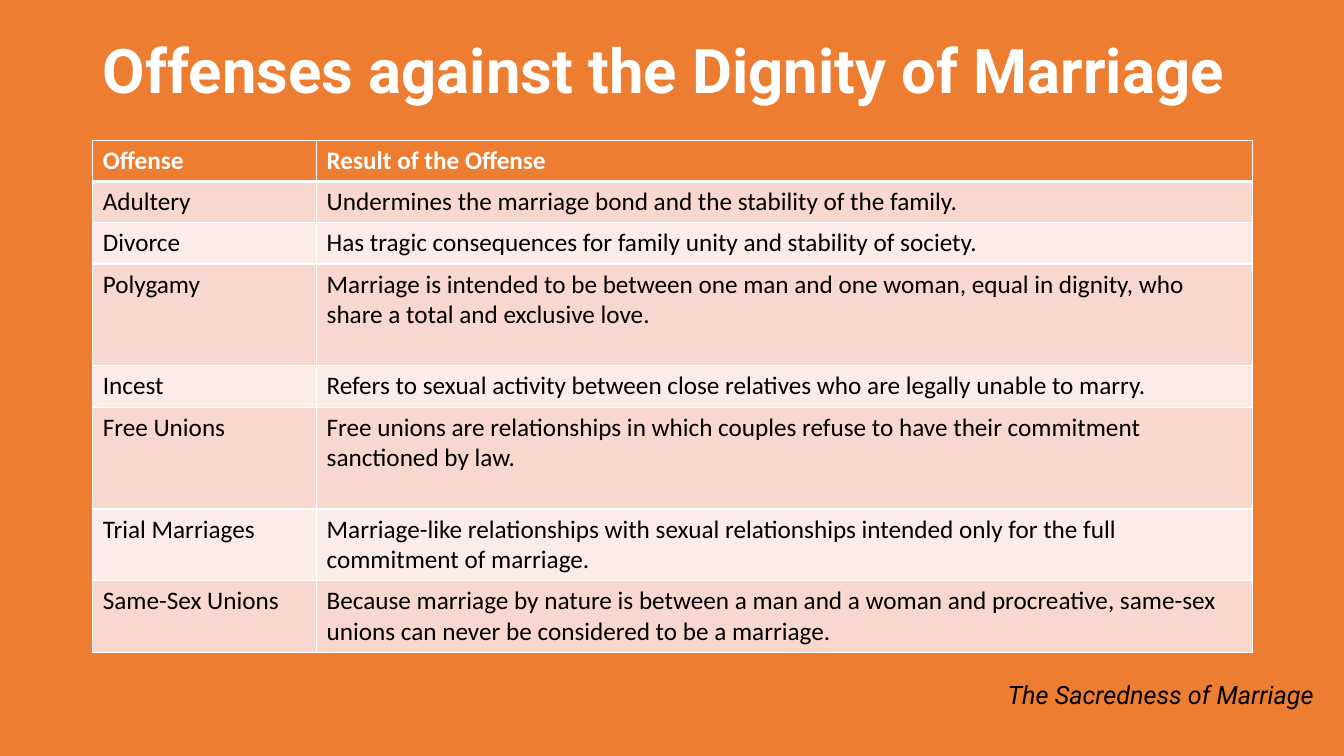
from dataclasses import dataclass

from lxml import etree
from pptx import Presentation
from pptx.dml.color import RGBColor
from pptx.enum import text
from pptx.oxml import ns
from pptx.util import Inches, Pt


@dataclass(frozen=True)
class Theme:
    orange: str = "ED7D31"
    white: str = "FFFFFF"
    black: str = "000000"
    bands: tuple = ("F8D7CE", "FCECE8")
    title_font: str = "Roboto"
    table_font: str = "Calibri"
    title_size: int = 44
    body_size: int = 18


theme = Theme()


def write(tf, words, font, size=theme.body_size, color=theme.black, bold=False,
          italic=False, align=text.PP_ALIGN.LEFT, spacing=1.0):
    tf.word_wrap = True
    p = tf.paragraphs[0]
    p.alignment = align
    p.line_spacing = spacing
    r = p.add_run()
    r.text = words
    r.font.name = font
    r.font.size = Pt(size)
    r.font.bold = bold
    r.font.italic = italic
    r.font.color.rgb = RGBColor.from_string(color)


def add_borders(cell, **widths):
    """Draw white cell borders; widths in points are keyed L, R, T and B."""
    tc_pr = cell._tc.get_or_add_tcPr()
    for i, (side, width) in enumerate(widths.items()):
        ln = etree.Element(ns.qn(f"a:ln{side}"), w=str(Pt(width)))
        fill = etree.SubElement(ln, ns.qn("a:solidFill"))
        etree.SubElement(fill, ns.qn("a:srgbClr"), val=theme.white)
        tc_pr.insert(i, ln)


prs = Presentation()
prs.slide_width = Inches(13.33)
prs.slide_height = Inches(7.5)
s = prs.slides.add_slide(prs.slide_layouts[5])
s.background.fill.solid()
s.background.fill.fore_color.rgb = RGBColor.from_string(theme.orange)

title = s.shapes.title
title.left, title.top = Inches(0.92), Inches(0)
title.width, title.height = Inches(12.42), Inches(1.45)
title.text_frame.vertical_anchor = text.MSO_ANCHOR.MIDDLE
write(title.text_frame, "Offenses against the Dignity of Marriage", theme.title_font,
      size=theme.title_size, color=theme.white, bold=True, spacing=0.9)

# Each row: height in inches, offense, result
offenses = [
    (0.41, "Offense", "Result of the Offense"),
    (0.41, "Adultery", "Undermines the marriage bond and the stability of the family."),
    (0.41, "Divorce", "Has tragic consequences for family unity and stability of society."),
    (1.01, "Polygamy", "Marriage is intended to be between one man and one woman, equal in "
     "dignity, who share a total and exclusive love."),
    (0.41, "Incest", "Refers to sexual activity between close relatives who are legally "
     "unable to marry."),
    (1.01, "Free Unions", "Free unions are relationships in which couples refuse to have "
     "their commitment sanctioned by law."),
    (0.71, "Trial Marriages", "Marriage-like relationships with sexual relationships "
     "intended only for the full commitment of marriage."),
    (0.71, "Same-Sex Unions", "Because marriage by nature is between a man and a woman and "
     "procreative, same-sex unions can never be considered to be a marriage."),
]
table_height = sum(height for height, *_ in offenses)
table = s.shapes.add_table(len(offenses), 2, Inches(0.92), Inches(1.39),
                           Inches(11.5), Inches(table_height)).table
table.columns[0].width = Inches(2.22)
table.columns[1].width = Inches(9.28)

for i, (height, *words) in enumerate(offenses):
    header = i == 0
    table.rows[i].height = Inches(height)
    for cell, content in zip(table.rows[i].cells, words):
        cell.fill.solid()
        cell.fill.fore_color.rgb = RGBColor.from_string(
            theme.orange if header else theme.bands[(i - 1) % 2])
        add_borders(cell, L=1, R=1, T=3 if i == 1 else 1, B=3 if header else 1)
        write(cell.text_frame, content, theme.table_font, bold=header,
              color=theme.white if header else theme.black)

footer = s.shapes.add_textbox(Inches(6.37), Inches(6.69), Inches(6.76), Inches(1.01))
write(footer.text_frame, "The Sacredness of Marriage", theme.title_font,
      italic=True, align=text.PP_ALIGN.RIGHT)

prs.save("out.pptx")
